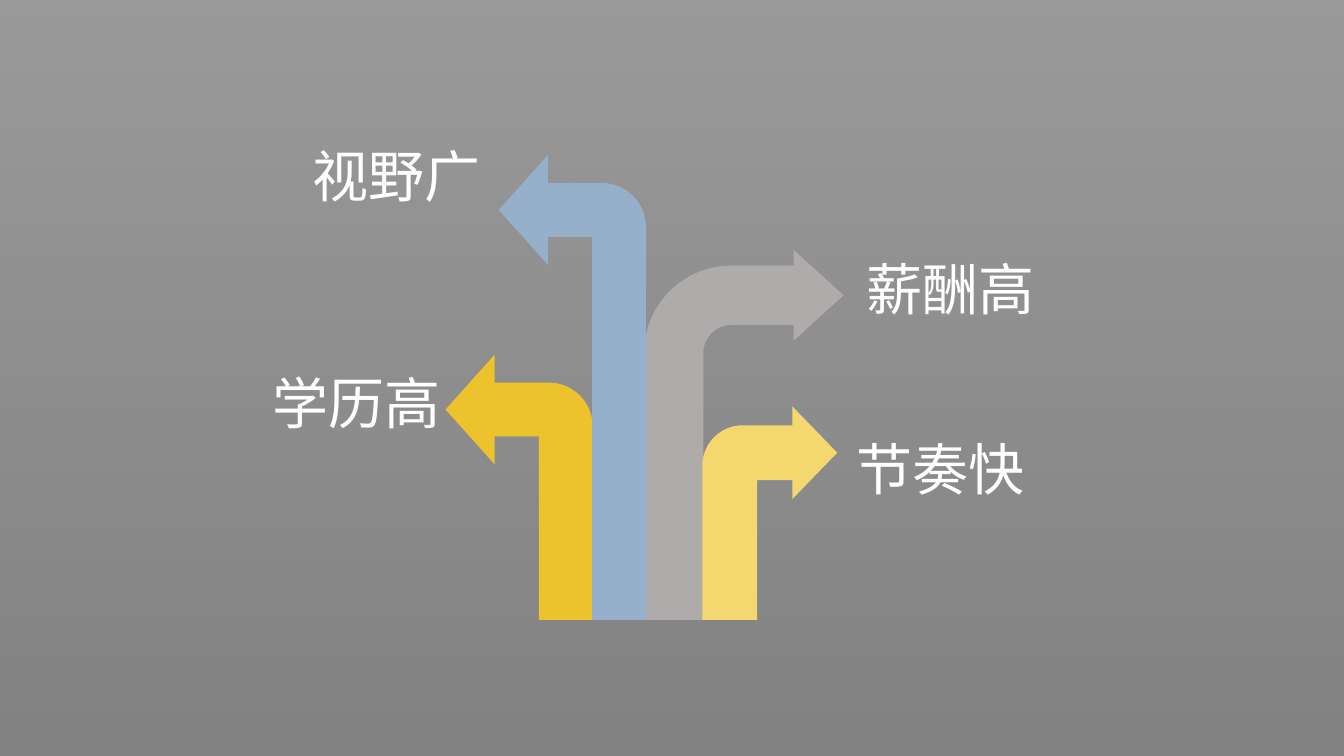
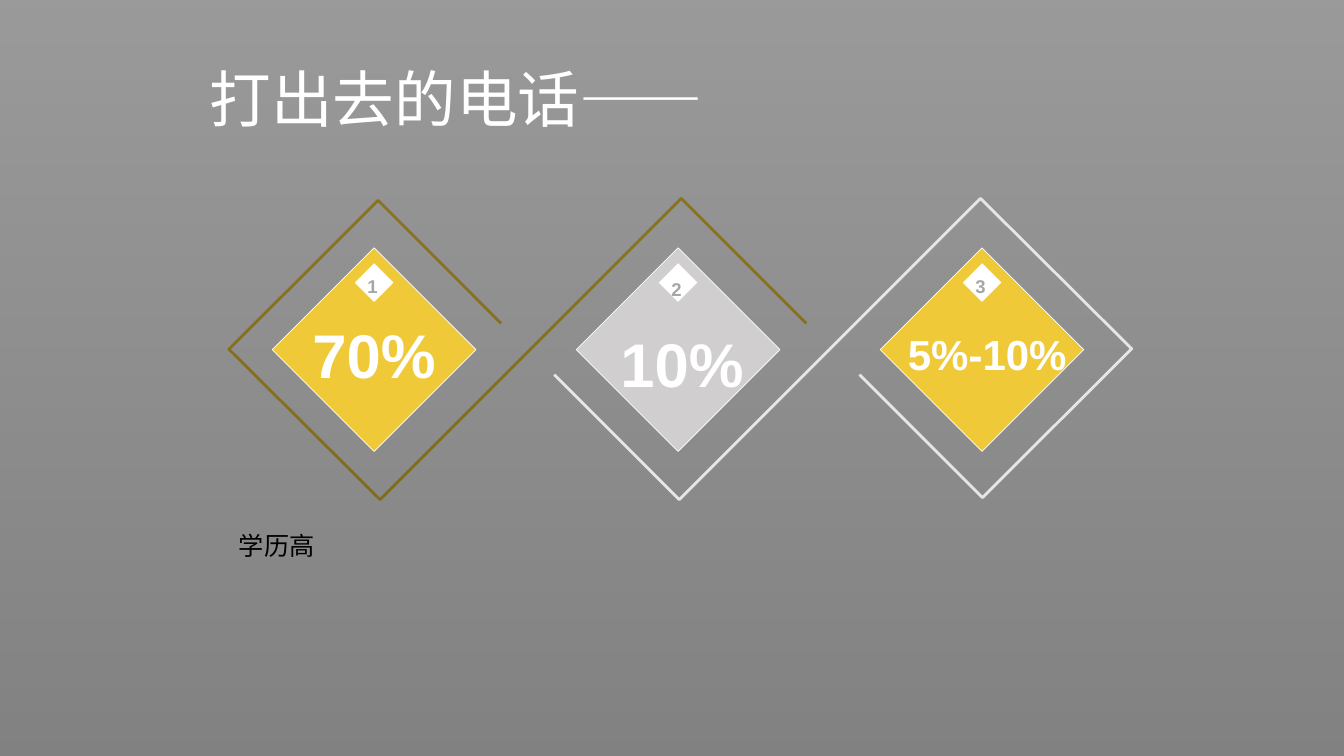
from lxml.etree import SubElement
from pptx import Presentation
from pptx.dml.color import RGBColor
from pptx.enum.shapes import MSO_SHAPE
from pptx.enum.text import MSO_ANCHOR, MSO_AUTO_SIZE, PP_ALIGN
from pptx.oxml.ns import qn
from pptx.util import Cm, Pt

COLORS = {
    "white": "FFFFFF", "black": "000000", "gold": "F0C939", "mustard": "ECC32D",
    "straw": "F5D770", "blue": "96AFCB", "warm_gray": "AFABAB",
    "silver": "D0CECE", "pale": "E7E6E6", "number": "A6A6A6",
}
CJK = "Noto Sans CJK JP"
TITLE_FONT = {"name": CJK, "size": Pt(44), "color": "white"}
LABEL_FONT = {"name": CJK, "size": Pt(40), "color": "white"}
CAPTION_FONT = {"name": "Calibri", "size": Pt(18), "color": "black"}
NUMBER_FONT = {"name": "Arial", "size": Pt(13.2), "bold": True, "color": "number"}
VALUE_FONT = {"name": "Arial", "bold": True, "color": "white"}
PLAIN_FRAME = {"word_wrap": True, "auto_size": MSO_AUTO_SIZE.NONE,
               "vertical_anchor": MSO_ANCHOR.TOP}
TIGHT_FRAME = {"margin_left": 0, "margin_right": 0, "margin_top": 0, "margin_bottom": 0}
CENTERED = {"alignment": PP_ALIGN.CENTER, "line_spacing": 1.2}
LEFT = {"alignment": PP_ALIGN.LEFT}
WIDTH, HEIGHT = 33.87, 19.05


def rgb(color):
    return RGBColor.from_string(COLORS[color])


def apply(target, values):
    for key, value in values.items():
        setattr(target, key, value)


def lengths(*values):
    return [Cm(value) for value in values]


def write(shape, text, font, frame=None, layout=LEFT):
    text_frame = shape.text_frame
    apply(text_frame, {**PLAIN_FRAME, **(frame or {})})
    paragraph = text_frame.paragraphs[0]
    apply(paragraph, layout)
    run = paragraph.add_run()
    run.text = text
    apply(run.font, {key: value for key, value in font.items() if key != "color"})
    run.font.color.rgb = rgb(font["color"])
    if font["name"] == CJK:
        SubElement(run.font._element, qn("a:ea"), typeface=CJK)


def add_text(shapes, box, text, font, frame=None, layout=LEFT):
    write(shapes.add_textbox(*lengths(*box)), text, font, frame, layout)


def add_filled(shapes, kind, box, color, outline=None):
    shape = shapes.add_shape(kind, *lengths(*box))
    shape.shadow.inherit = False
    shape.fill.solid()
    shape.fill.fore_color.rgb = rgb(color)
    if outline:
        shape.line.color.rgb = rgb(outline)
        shape.line.width = Pt(0.5)
    else:
        shape.line.fill.background()
    return shape


def add_shade(slide):
    shade = add_filled(slide.shapes, MSO_SHAPE.RECTANGLE, (0, 0, WIDTH, HEIGHT), "black")
    shade.fill.gradient()
    shade.fill.gradient_angle = 270
    for stop, opacity in zip(shade.fill.gradient_stops, (40, 50)):
        stop.color.rgb = rgb("black")
    for color, opacity in zip(shade.element.spPr.iter(qn("a:srgbClr")), (40, 50)):
        SubElement(color, qn("a:alpha"), val=str(opacity * 1000))


def add_signpost(slide, left, top, height):
    right_wide = (0.297, 0.227, 0.25, 0.438)
    right_short = (0.407, 0.344, 0.333, 0.299)
    left_turn = (0.366, 0.372, 0.333, 0.299)
    arrows = [
        (5, 2.39, 5.03, "warm_gray", right_wide, False, "薪酬高", 10.36, 2.39),
        (6.47, 6.33, 3.4, "straw", right_short, False, "节奏快", 10.11, 6.91),
        (0, 5.03, 3.71, "mustard", left_turn, True, "学历高", -4.6, 5.26),
        (1.34, 0, 3.71, "blue", left_turn, True, "视野广", -3.61, -0.46),
    ]
    for x, y, width, color, bends, flipped, label, label_x, label_y in arrows:
        arrow = add_filled(slide.shapes, MSO_SHAPE.BENT_ARROW,
                           (left + x, top + y, width, height - y), color)
        for index, bend in enumerate(bends):
            arrow.adjustments[index] = bend
        if flipped:
            arrow.element.spPr.find(qn("a:xfrm")).set("flipH", "1")
        add_text(slide.shapes, (left + label_x, top + label_y, 5, 1.96), label, LABEL_FONT)


def add_ribbon(slide, left, top, color, turned=False):
    width, height = 14.55, 7.59
    points = [(width, 3.15), (11.4, 0), (3.81, height), (0, 3.8), (3.76, 0.05), (6.86, 3.15)]
    if turned:
        points = [(width - x, height - y) for x, y in points]
    points = [lengths(left + x, top + y) for x, y in points]
    builder = slide.shapes.build_freeform(*points[0], scale=1.0)
    builder.add_line_segments(points[1:], close=False)
    ribbon = builder.convert_to_shape()
    ribbon.shadow.inherit = False
    ribbon.fill.background()
    ribbon.line.color.rgb = rgb(color)
    ribbon.line.width = Pt(2)


def add_badge(slide, center_x, center_y, number, value, color, size, value_x, value_y, drop):
    shapes = slide.shapes.add_group_shape().shapes
    for side, offset, fill, outline in ((3.63, 0, color, "white"), (0.69, -1.69, "white", None)):
        box = (center_x - side / 2, center_y + offset - side / 2, side, side)
        add_filled(shapes, MSO_SHAPE.RECTANGLE, box, fill, outline).rotation = 315
    add_text(shapes, (center_x - 0.19, center_y - 2 + drop, 0.3, 0.69), number,
             NUMBER_FONT, {**TIGHT_FRAME, "word_wrap": False}, CENTERED)
    add_text(shapes, (center_x + value_x - 3.16, center_y + value_y, 6.32, 2.26), value,
             {**VALUE_FONT, "size": Pt(size)}, TIGHT_FRAME, CENTERED)


def build_signpost_slide(presentation):
    slide = presentation.slides.add_slide(presentation.slide_layouts[6])
    add_shade(slide)
    add_signpost(slide, 11.23, 3.91, 11.71)


def build_calls_slide(presentation):
    slide = presentation.slides.add_slide(presentation.slide_layouts[5])
    add_text(slide.shapes, (5.77, 13.23, 9.42, 1.02), "学历高", CAPTION_FONT)
    add_ribbon(slide, 5.77, 5, "gold")
    add_shade(slide)
    add_ribbon(slide, 13.97, 5, "pale", turned=True)
    badges = [
        ("1", "70%", "gold", 44, 0, -1.19, 0),
        ("2", "10%", "silver", 44, 0.1, -0.97, 0.08),
        ("3", "5%-10%", "gold", 30, 0.13, -0.79, 0),
    ]
    for index, badge in enumerate(badges):
        add_badge(slide, 9.43 + 7.66 * index, 8.81, *badge)
    title = slide.shapes.title
    apply(title, dict(zip(("left", "top", "width", "height"), lengths(5.03, 1.4, 18.67, 2.13))))
    write(title, "打出去的电话——", TITLE_FONT)
    slide.shapes.element.append(title.element)


def main():
    presentation = Presentation()
    presentation.slide_width, presentation.slide_height = lengths(WIDTH, HEIGHT)
    build_signpost_slide(presentation)
    build_calls_slide(presentation)
    presentation.save("out.pptx")


if __name__ == "__main__":
    main()
